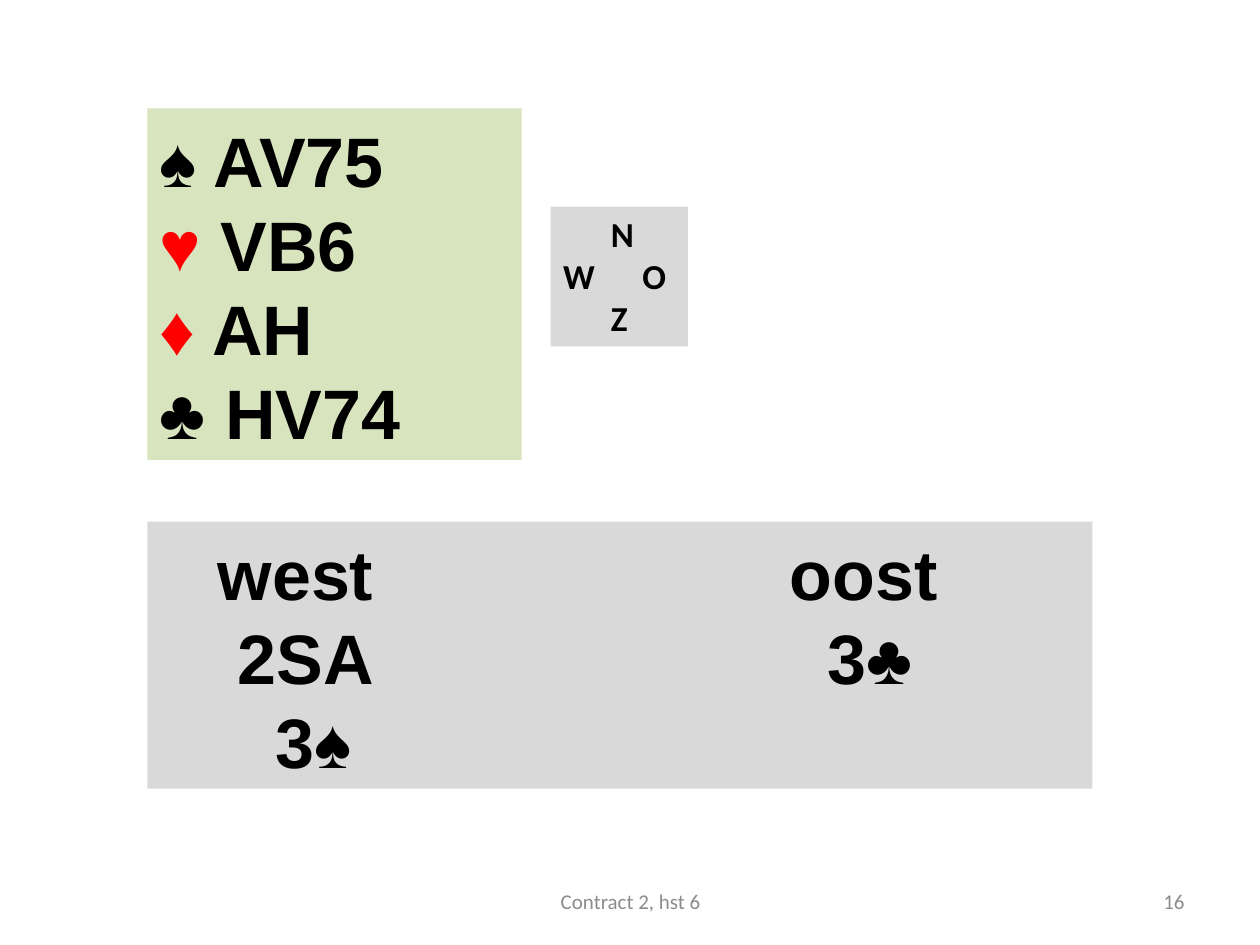
from dataclasses import dataclass
from itertools import groupby

from lxml.etree import SubElement
from pptx import Presentation
from pptx.dml.color import RGBColor
from pptx.enum.shapes import MSO_SHAPE as SHAPE
from pptx.enum.text import MSO_ANCHOR as ANCHOR, PP_ALIGN as ALIGN
from pptx.oxml.ns import qn
from pptx.util import Inches, Pt

COLS, ROWS = 100, 75
CELL = Inches(0.1)


@dataclass(frozen=True)
class Theme:
    """Colours, fonts and type sizes of the slide."""
    ink: str = "000000"
    red: str = "FF0000"
    muted: str = "8C8C8C"
    panel: str = "D9D9D9"
    hand: str = "D7E4BD"
    body: str = "Arial"
    label: str = "Calibri"
    big: int = 40
    mid: int = 20
    small: int = 12
    leading: int = 48


T = Theme()


def grid(n):
    """Turn grid cells into a length."""
    return int(n * CELL)


def add_panel(s, box, fill):
    """Add a plain filled rectangle."""
    sp = s.shapes.add_shape(SHAPE.RECTANGLE, *map(grid, box))
    sp.shadow.inherit = False
    sp.fill.solid()
    sp.fill.fore_color.rgb = RGBColor.from_string(fill)
    sp.line.fill.background()
    return sp


def write(sp, lines, font=T.body, size=T.big, color=T.ink, bold=True, align=ALIGN.LEFT,
          anchor=ANCHOR.TOP, leading=None, top=0.5, stops=()):
    """Write lines into a shape, with red suits in red and tab stops per line."""
    tf = sp.text_frame
    tf.word_wrap = True
    tf.vertical_anchor = anchor
    tf.margin_top, tf.margin_bottom = grid(top), 0
    for i, line in enumerate(lines):
        p = tf.paragraphs[0] if i == 0 else tf.add_paragraph()
        p.alignment = align
        if leading:
            p.line_spacing = Pt(leading)
        if stops:
            tabs = SubElement(p._p.get_or_add_pPr(), qn("a:tabLst"))
            for pos in stops[i]:
                SubElement(tabs, qn("a:tab"), pos=str(grid(pos)), algn="l")
        for is_red, chars in groupby(line, key=lambda ch: ch in "♥♦"):
            r = p.add_run()
            r.text = "".join(chars)
            r.font.name, r.font.size, r.font.bold = font, Pt(size), bold
            r.font.color.rgb = RGBColor.from_string(T.red if is_red else color)


def add_hand(s, box, suits):
    """Add the panel with the cards of one hand."""
    write(add_panel(s, box, T.hand), suits, leading=T.leading, top=0.7)


def add_compass(s, box):
    """Add the compass with the four seats."""
    mid, right = 3.8, 6.3
    write(add_panel(s, box, T.panel), ["\tN", "W\tO", "\tZ"], font=T.label, size=T.mid,
          stops=[[mid], [right], [mid]])


def add_bidding(s, box):
    """Add the panel with the bids of west and east."""
    write(add_panel(s, box, T.panel), ["\twest\toost", "\t2SA\t3♣", "\t3♠"],
          leading=T.leading, top=0.7, stops=[[4.6, 50], [6.2, 53], [9.2]])


def add_footer(s, box, text, align):
    """Add one small footer text."""
    write(s.shapes.add_textbox(*map(grid, box)), [text], font=T.label, size=T.small,
          color=T.muted, bold=False, align=align, anchor=ANCHOR.MIDDLE, top=0)


def main():
    """Build and save the slide."""
    prs = Presentation()
    prs.slide_width, prs.slide_height = grid(COLS), grid(ROWS)
    s = prs.slides.add_slide(prs.slide_layouts[6])
    left = 11.7
    add_compass(s, (43.7, 16.4, 10.9, 11.1))
    add_bidding(s, (left, 41.4, 75, 21.2))
    add_hand(s, (left, 8.6, 29.7, 27.9), ["♠ AV75", "♥ VB6", "♦ AH", "♣ HV74"])
    add_footer(s, (71.7, 69.5, 23.3, 4), "16", ALIGN.RIGHT)
    add_footer(s, (34.2, 69.5, 31.7, 4), "Contract 2, hst 6", ALIGN.CENTER)
    prs.save("out.pptx")


if __name__ == "__main__":
    main()
